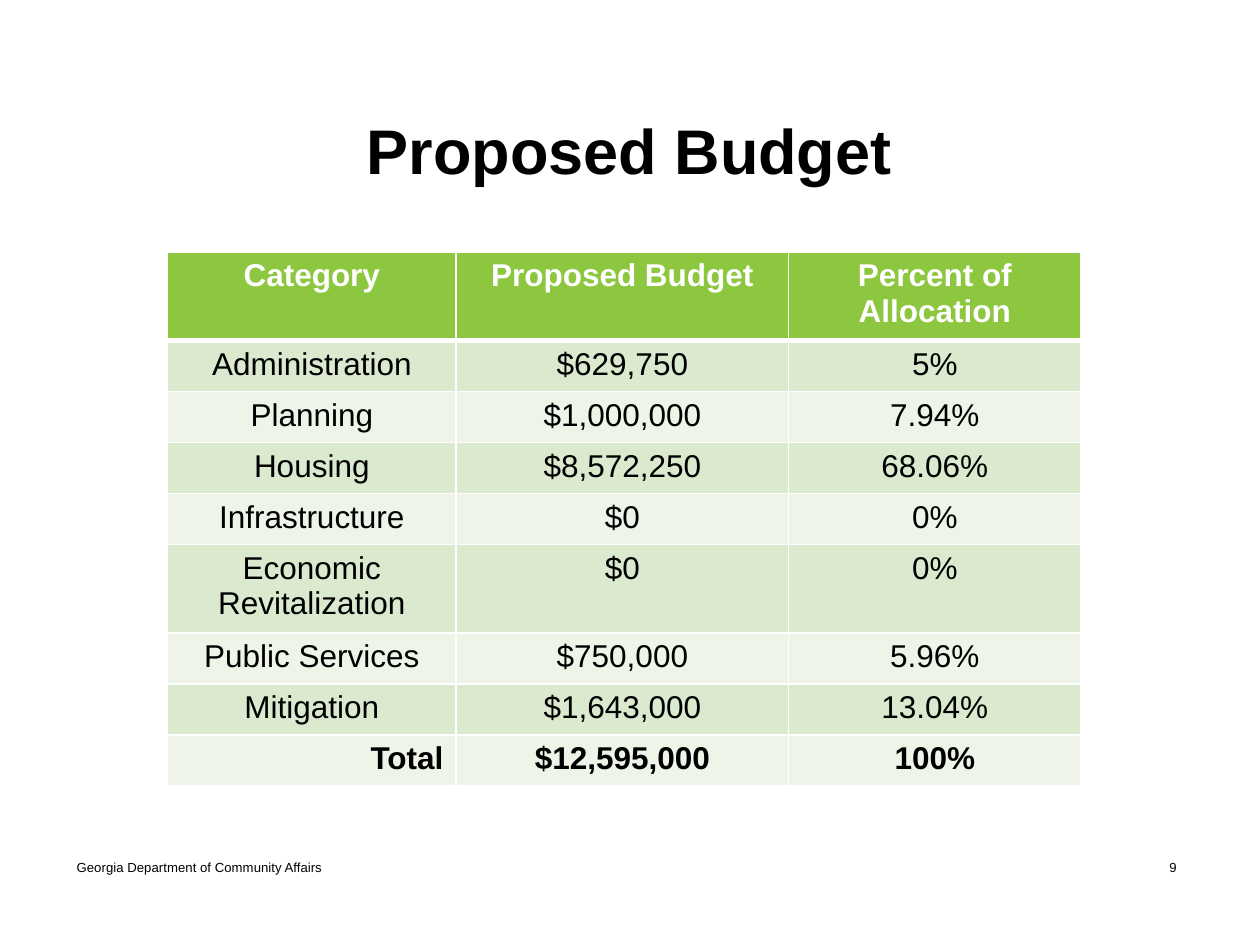
import pptx
import pptx.util
import pptx.dml.color
import pptx.enum.text
import pptx.oxml
import pptx.oxml.ns

Inches = pptx.util.Inches
ALIGN = pptx.enum.text.PP_ALIGN
ANCHOR = pptx.enum.text.MSO_ANCHOR

HEAD = ["Category", "Proposed Budget", "Percent of Allocation"]
ROWS = [
    ["Administration", "$629,750", "5%"],
    ["Planning", "$1,000,000", "7.94%"],
    ["Housing", "$8,572,250", "68.06%"],
    ["Infrastructure", "$0", "0%"],
    ["Economic Revitalization", "$0", "0%"],
    ["Public Services", "$750,000", "5.96%"],
    ["Mitigation", "$1,643,000", "13.04%"],
    ["Total", "$12,595,000", "100%"],
]
WIDTHS = [2.29, 2.64, 2.32]


def paint(target, color):
    """Set the colour of a fill or a font from a hex string."""
    if hasattr(target, "solid"):
        target.solid()
        target.fore_color.rgb = pptx.dml.color.RGBColor.from_string(color)
    else:
        target.color.rgb = pptx.dml.color.RGBColor.from_string(color)


def write(frame, text, size=18, color="000000", bold=False, align=ALIGN.CENTER, space=None):
    """Put one formatted paragraph into a text frame."""
    para = frame.paragraphs[0]
    para.alignment = align
    para.line_spacing = space
    run = para.add_run()
    run.text = text
    run.font.name = "Arial"
    run.font.size = pptx.util.Pt(size)
    run.font.bold = bold
    paint(run.font, color)


def add_text(slide, box, text, **form):
    """Add a wrapped, vertically centred text box."""
    frame = slide.shapes.add_textbox(*map(Inches, box)).text_frame
    frame.word_wrap = True
    frame.vertical_anchor = ANCHOR.MIDDLE
    write(frame, text, **form)


def edge(cell, side, width):
    """Draw a white border on one side of a cell."""
    line = pptx.oxml.parse_xml(
        f'<a:{side} {pptx.oxml.ns.nsdecls("a")} w="{pptx.util.Pt(width)}">'
        f'<a:solidFill><a:srgbClr val="FFFFFF"/></a:solidFill></a:{side}>'
    )
    cell._tc.get_or_add_tcPr().append(line)


def add_budget(slide):
    """Add the budget table with a header, striped rows and a bold total."""
    data = [HEAD] + ROWS
    last = len(ROWS)
    box = map(Inches, (1.33, 2, sum(WIDTHS), 3.65))
    table = slide.shapes.add_table(len(data), len(HEAD), *box).table
    for column, width in zip(table.columns, WIDTHS):
        column.width = Inches(width)
    for i, row in enumerate(data):
        fill = "8DC63F" if i == 0 else ("EEF5E8", "DBEACF")[i % 2]
        for j, text in enumerate(row):
            cell = table.cell(i, j)
            for side in ("lnL", "lnR", "lnT", "lnB"):
                thick = (i, side) in ((0, "lnB"), (1, "lnT"))
                edge(cell, side, 3 if thick else 1)
            paint(cell.fill, fill)
            write(
                cell.text_frame,
                text,
                color="FFFFFF" if i == 0 else "000000",
                bold=i in (0, last),
                align=ALIGN.RIGHT if (i, j) == (last, 0) else ALIGN.CENTER,
            )


def main():
    """Build and save the budget slide."""
    deck = pptx.Presentation()
    deck.slide_width, deck.slide_height = Inches(10), Inches(7.5)
    slide = deck.slides.add_slide(deck.slide_layouts[6])
    add_text(slide, (0.51, 6.68, 3.38, 0.4), "Georgia Department of Community Affairs",
             size=7.5, align=ALIGN.LEFT)
    add_text(slide, (9.06, 6.51, 0.5, 0.74), "9", size=7.5)
    add_budget(slide)
    add_text(slide, (0.69, 0.6, 8.61, 1.25), "Proposed Budget", size=36, bold=True, space=0.9)
    deck.save("out.pptx")


if __name__ == "__main__":
    main()
